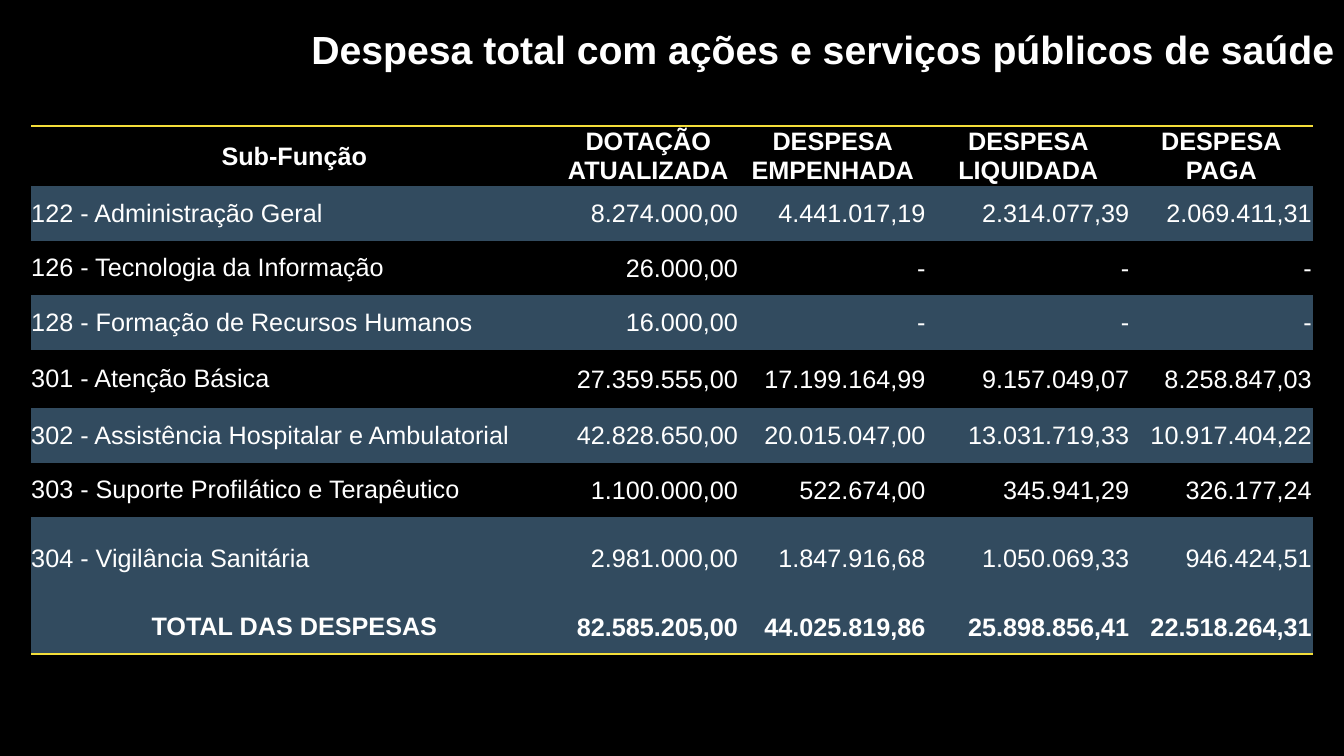
from lxml.etree import SubElement
from pptx import Presentation
from pptx.dml.color import RGBColor
from pptx.enum.text import MSO_ANCHOR as Anchor, MSO_AUTO_SIZE as AutoSize, PP_ALIGN as Align
from pptx.oxml.ns import qn
from pptx.util import Inches, Pt

BLACK, WHITE, BAND, RULE = "000000", "FFFFFF", "324B5F", "F4DE3A"
PLAIN_TABLE_STYLE = "{2D5ABB26-0587-4C30-8999-92F81FD0307C}"
COLUMN_WIDTHS = [5.22, 1.8, 1.86, 2.02, 1.81]
ROW_HEIGHTS = [0.6, 0.54, 0.54, 0.54, 0.58, 0.54, 0.54, 0.82, 0.54]
EXPENSES = [
    ["Sub-Função", "DOTAÇÃO\nATUALIZADA", "DESPESA\nEMPENHADA", "DESPESA\nLIQUIDADA", "DESPESA\nPAGA"],
    ["122 - Administração Geral", "8.274.000,00", "4.441.017,19", "2.314.077,39", "2.069.411,31"],
    ["126 - Tecnologia da Informação", "26.000,00", "-", "-", "-"],
    ["128 - Formação de Recursos Humanos", "16.000,00", "-", "-", "-"],
    ["301 - Atenção Básica", "27.359.555,00", "17.199.164,99", "9.157.049,07", "8.258.847,03"],
    ["302 - Assistência Hospitalar e Ambulatorial", "42.828.650,00", "20.015.047,00",
     "13.031.719,33", "10.917.404,22"],
    ["303 - Suporte Profilático e Terapêutico", "1.100.000,00", "522.674,00", "345.941,29", "326.177,24"],
    ["304 - Vigilância Sanitária", "2.981.000,00", "1.847.916,68", "1.050.069,33", "946.424,51"],
    ["TOTAL DAS DESPESAS", "82.585.205,00", "44.025.819,86", "25.898.856,41", "22.518.264,31"],
]


def color(value):
    """Turn a hex string into a colour."""
    return RGBColor.from_string(value)


def format_text(text_frame, size, bold, alignment):
    """Give every paragraph of a text frame the same look."""
    for paragraph in text_frame.paragraphs:
        paragraph.alignment = alignment
        for run in paragraph.runs:
            run.font.name = "Arial"
            run.font.size = Pt(size)
            run.font.bold = bold
            run.font.color.rgb = color(WHITE)


def add_border(cell, side):
    """Draw a one-point rule on one side of a cell."""
    line = SubElement(cell._tc.get_or_add_tcPr(), qn(f"a:{side}"), w=str(Pt(1)))
    SubElement(SubElement(line, qn("a:solidFill")), qn("a:srgbClr"), val=RULE)


def add_title(slide, left, top, width, height):
    """Place the right-aligned slide title."""
    box = slide.shapes.add_textbox(Inches(left), Inches(top), Inches(width), Inches(height))
    text_frame = box.text_frame
    text_frame.word_wrap = True
    text_frame.auto_size = AutoSize.SHAPE_TO_FIT_TEXT
    text_frame.text = "Despesa total com ações e serviços públicos de saúde"
    format_text(text_frame, 28, True, Align.RIGHT)


def fill_cell(cell, text, row, column):
    """Write one table cell and style it by its row and column."""
    last = len(EXPENSES) - 1
    is_header, is_total, is_label = row == 0, row == last, column == 0
    inset = Inches(0 if is_header or is_label else 0.01)
    cell.margin_left = cell.margin_right = cell.margin_top = inset
    cell.margin_bottom = 0
    cell.vertical_anchor = Anchor.MIDDLE
    cell.text_frame.text = text
    if is_header or (is_total and is_label):
        alignment = Align.CENTER
    else:
        alignment = Align.LEFT if is_label else Align.RIGHT
    format_text(cell.text_frame, 18, is_header or is_total, alignment)
    if is_header:
        add_border(cell, "lnT")
    if is_total:
        add_border(cell, "lnB")
    if row % 2 or is_total:
        cell.fill.solid()
        cell.fill.fore_color.rgb = color(BAND)
    else:
        cell.fill.background()


def add_expense_table(slide, left, top, width, height):
    """Place the table of expenses by sub-function."""
    frame = slide.shapes.add_table(len(ROW_HEIGHTS), len(COLUMN_WIDTHS), Inches(left),
                                   Inches(top), Inches(width), Inches(height))
    table = frame.table
    table.first_row = table.horz_banding = False
    table._tbl.tblPr.find(qn("a:tableStyleId")).text = PLAIN_TABLE_STYLE
    for column, column_width in zip(table.columns, COLUMN_WIDTHS):
        column.width = Inches(column_width)
    for row, row_height in zip(table.rows, ROW_HEIGHTS):
        row.height = Inches(row_height)
    for row_index, values in enumerate(EXPENSES):
        for column_index, value in enumerate(values):
            fill_cell(table.cell(row_index, column_index), value, row_index, column_index)


def main():
    """Build and save the presentation."""
    presentation = Presentation()
    presentation.slide_width, presentation.slide_height = Inches(13.33), Inches(7.5)
    slide = presentation.slides.add_slide(presentation.slide_layouts[6])
    slide.background.fill.solid()
    slide.background.fill.fore_color.rgb = color(BLACK)
    add_expense_table(slide, 0.31, 1.25, sum(COLUMN_WIDTHS), sum(ROW_HEIGHTS))
    add_title(slide, 2.79, 0.2, 10.54, 0.57)
    presentation.save("out.pptx")


if __name__ == "__main__":
    main()
